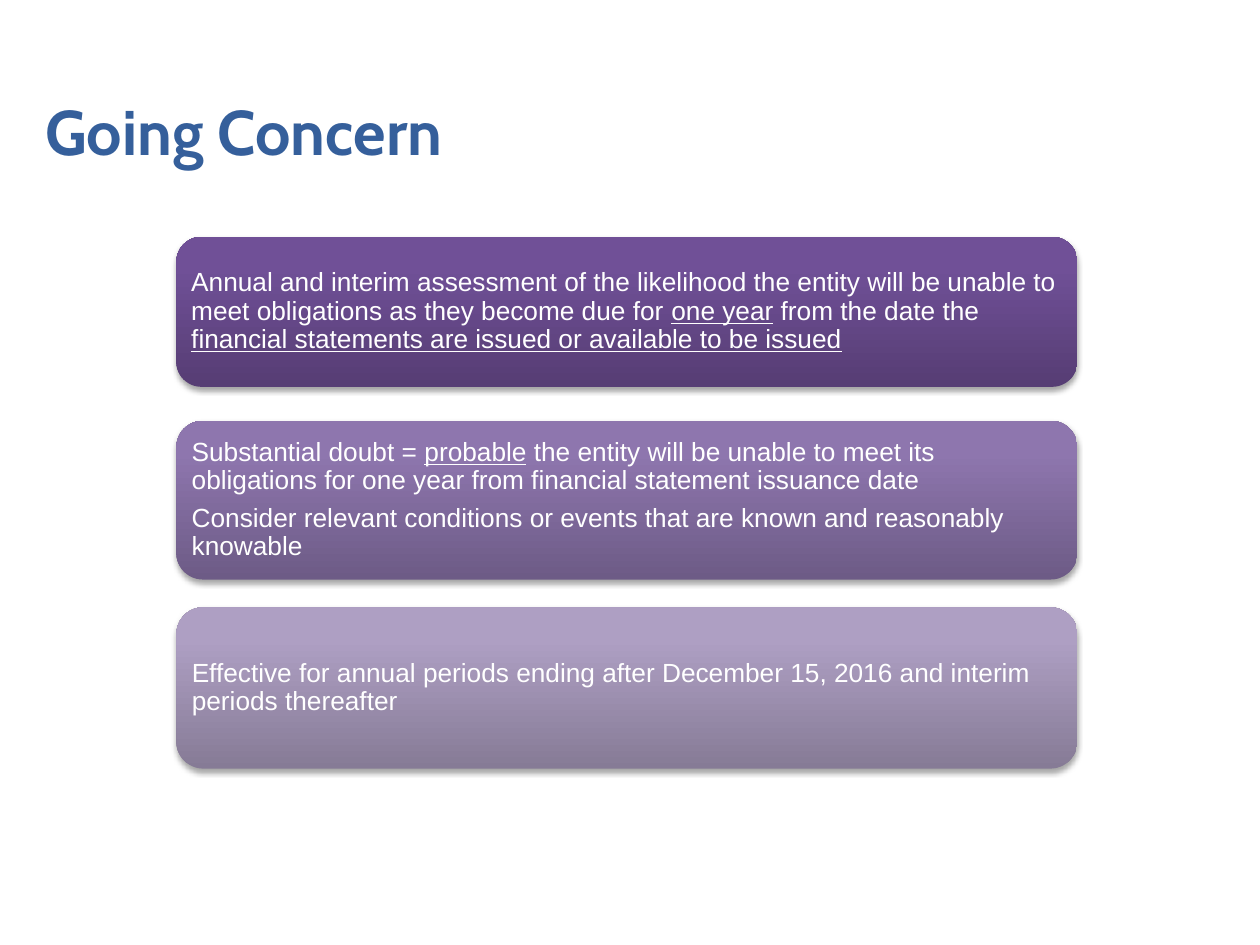
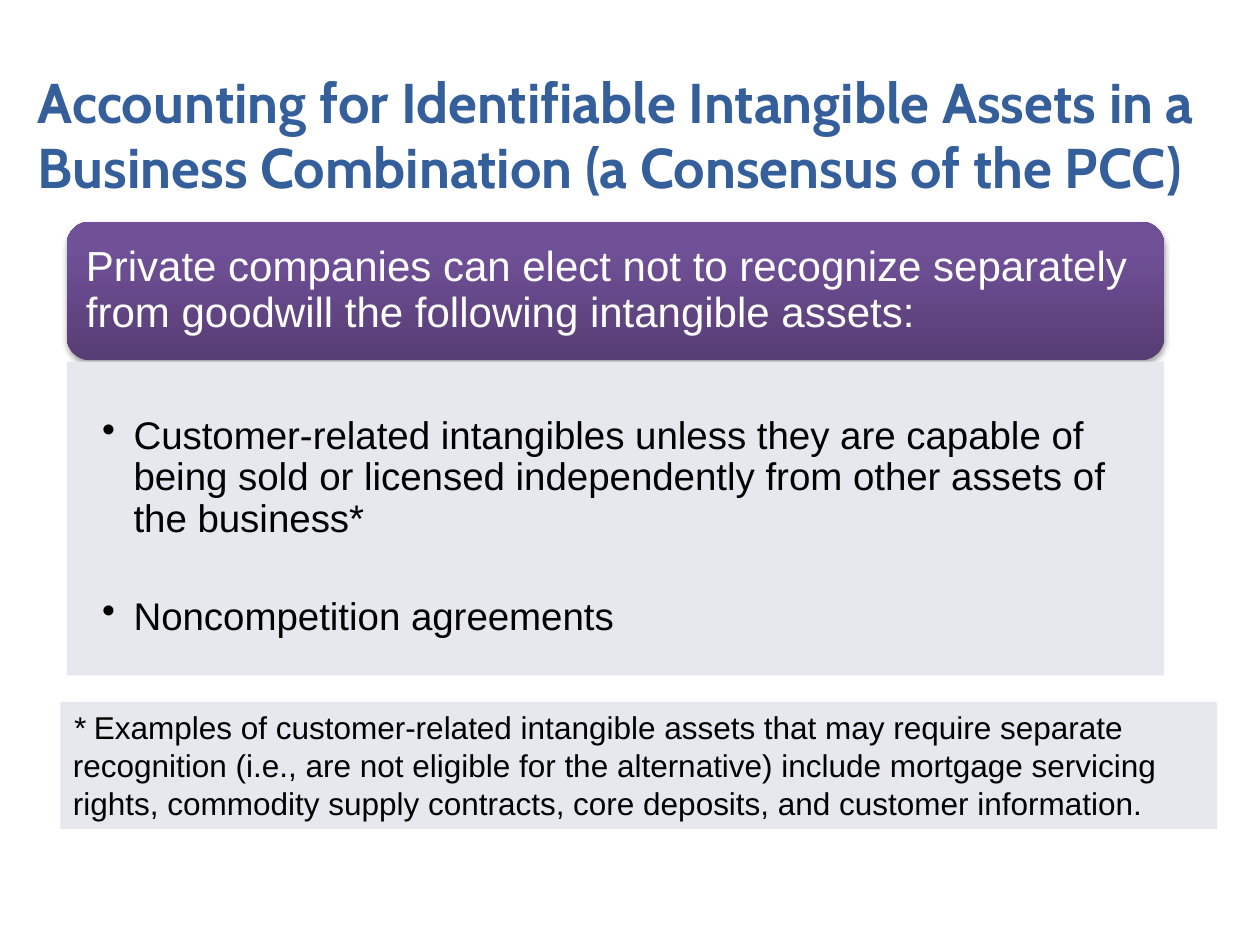
"""Build two slides on accounting standard updates."""
from pptx import Presentation
from pptx.dml.color import RGBColor
from pptx.enum.shapes import MSO_SHAPE
from pptx.enum.text import MSO_ANCHOR, MSO_AUTO_SIZE, PP_ALIGN
from pptx.oxml import parse_xml
from pptx.oxml.ns import nsdecls
from pptx.util import Inches, Pt

ROUND, RECT = MSO_SHAPE.ROUNDED_RECTANGLE, MSO_SHAPE.RECTANGLE
MIDDLE, TOP = MSO_ANCHOR.MIDDLE, MSO_ANCHOR.TOP
LEFT = PP_ALIGN.LEFT
FIXED = MSO_AUTO_SIZE.NONE

DEEP = ("563D74", "705097", "704F99")
MID = ("6D5B86", "8E76AE", "8E75B0")
PALE = ("867B96", "AE9FC3", "AE9FC4")
BLUE, GREY, WHITE, BLACK = "355F9B", "E7E8EE", "FFFFFF", "000000"
HEAD, BODY = "Cabin", "Arial"


def color(code):
    """Turn a hex string into a colour."""
    return RGBColor.from_string(code)


class Deck:
    """Hold the shared style and the current slide."""

    def __init__(self):
        """Start an empty deck."""
        self.prs = Presentation()
        self.prs.slide_width, self.prs.slide_height = Inches(10), Inches(7.5)
        self.slide = None

    def title(self, text, left, top, size):
        """Add a slide and format its title."""
        self.slide = self.prs.slides.add_slide(self.prs.slide_layouts[5])
        shape = self.slide.shapes.title
        self.place(shape, left, top, 9.74, 0.98)
        frame = shape.text_frame
        frame.auto_size, frame.vertical_anchor = FIXED, MIDDLE
        para = frame.paragraphs[0]
        para.alignment, para.line_spacing = LEFT, Pt(37)
        self.run(para, text, HEAD, size, BLUE).bold = True

    def place(self, shape, left, top, width, height):
        """Set the position and size of a shape."""
        shape.left, shape.top = Inches(left), Inches(top)
        shape.width, shape.height = Inches(width), Inches(height)

    def run(self, para, text, face, size, ink):
        """Add a run and return its font."""
        run = para.add_run()
        run.text = text
        font = run.font
        font.name, font.size, font.color.rgb = face, Pt(size), color(ink)
        return font

    def shape(self, kind, box):
        """Add a preset shape without line or shadow."""
        shape = self.slide.shapes.add_shape(kind, *map(Inches, box))
        shape.shadow.inherit = False
        shape.line.fill.background()
        return shape

    def label(self, shape, paras, size, ink, pads, anchor=MIDDLE,
              pitch=0.9, gap=0, bullet=False):
        """Fill a shape with paragraphs of (text, style) runs."""
        frame = shape.text_frame
        frame.word_wrap, frame.vertical_anchor = True, anchor
        (frame.margin_left, frame.margin_top,
         frame.margin_right, frame.margin_bottom) = map(Inches, pads)
        for num, parts in enumerate(paras):
            para = frame.add_paragraph() if num else frame.paragraphs[0]
            para.alignment, para.line_spacing = LEFT, pitch
            if num:
                para.space_before = Pt(gap)
            if bullet:
                self.bullet(para)
            for text, style in parts:
                font = self.run(para, text, BODY, size, ink)
                font.underline, font.italic = style == "u", style == "i"

    def bullet(self, para):
        """Give a paragraph a hanging bullet."""
        props = para._p.get_or_add_pPr()
        props.set("marL", str(Inches(0.25)))
        props.set("indent", str(-Inches(0.25)))
        props.append(parse_xml(f'<a:buChar {nsdecls("a")} char="•"/>'))

    def card(self, box, shades, paras, size, pad):
        """Add a rounded card with a gradient and a soft shadow."""
        shape = self.shape(ROUND, box)
        stops = "".join(
            f'<a:gs pos="{pos}000"><a:srgbClr val="{shade}"/></a:gs>'
            for pos, shade in zip((0, 80, 100), shades))
        props = shape._element.spPr
        props.insert(2, parse_xml(
            f'<a:gradFill {nsdecls("a")} rotWithShape="1"><a:gsLst>{stops}'
            '</a:gsLst><a:lin ang="16200000" scaled="0"/></a:gradFill>'))
        props.remove(props.find("{*}effectLst"))
        props.append(parse_xml(
            f'<a:effectLst {nsdecls("a")}><a:outerShdw blurRad="{Pt(3.1)}" '
            f'dist="{Pt(1.8)}" dir="5400000" rotWithShape="0">'
            f'<a:srgbClr val="{BLACK}"><a:alpha val="35000"/></a:srgbClr>'
            '</a:outerShdw></a:effectLst>'))
        self.label(shape, paras, size, WHITE, [pad] * 4, gap=size * 0.35)

    def panel(self, box, paras, size, pads, **style):
        """Add a flat grey panel with black text."""
        shape = self.shape(RECT, box)
        shape.fill.solid()
        shape.fill.fore_color.rgb = color(GREY)
        self.label(shape, paras, size, BLACK, pads, TOP, **style)


def concern(deck):
    """Build the going concern slide."""
    deck.title("Going Concern", 0.26, 0.59, 36)
    cards = [
        (1.88, 1.19, DEEP, [[
            ("Annual and interim assessment of the likelihood the entity will "
             "be unable to meet obligations as they become due for ", ""),
            ("one year", "u"),
            (" from the date the ", ""),
            ("financial statements are issued or available to be issued", "u"),
        ]]),
        (3.34, 1.26, MID, [
            [("Substantial doubt = ", ""),
             ("probable", "u"),
             (" the entity will be unable to meet its obligations for one "
              "year from financial statement issuance date", "")],
            [("Consider relevant conditions or events that are known and "
              "reasonably knowable", "")],
        ]),
        (4.82, 1.28, PALE, [[
            ("Effective for annual periods ending after December 15, 2016 "
             "and interim periods thereafter", "")]]),
    ]
    for top, height, shades, paras in cards:
        deck.card((1.4, top, 7.15, height), shades, paras, 15, 0.06)


def assets(deck):
    """Build the intangible assets slide."""
    deck.title("Accounting for Identifiable Intangible Assets in a Business "
               "Combination (a Consensus of the PCC)", 0.2, 0.58, 32)
    deck.card((0.53, 1.76, 8.71, 1.1), DEEP, [[
        ("Private companies can elect not to recognize separately from "
         "goodwill the following intangible assets:", "")]], 24, 0.1)
    deck.panel((0.53, 2.87, 8.71, 2.49), [
        [("Customer-related intangibles unless they are capable of being sold "
          "or licensed independently from other assets of the business*", "")],
        [("Noncompetition agreements", "")],
    ], 22, (0.28, 0.43, 0.17, 0.03), gap=32.4, bullet=True)
    deck.panel((0.48, 5.57, 9.18, 1.01), [[
        ("*", "i"),
        (" Examples of customer-related intangible assets that may require "
         "separate recognition (i.e., are not eligible for the alternative) "
         "include mortgage servicing rights, commodity supply contracts, core "
         "deposits, and customer information.", ""),
    ]], 18, (0.1, 0.05, 0.1, 0.05), pitch=1)


def main():
    """Build and save the deck."""
    deck = Deck()
    concern(deck)
    assets(deck)
    deck.prs.save("out.pptx")


if __name__ == "__main__":
    main()
